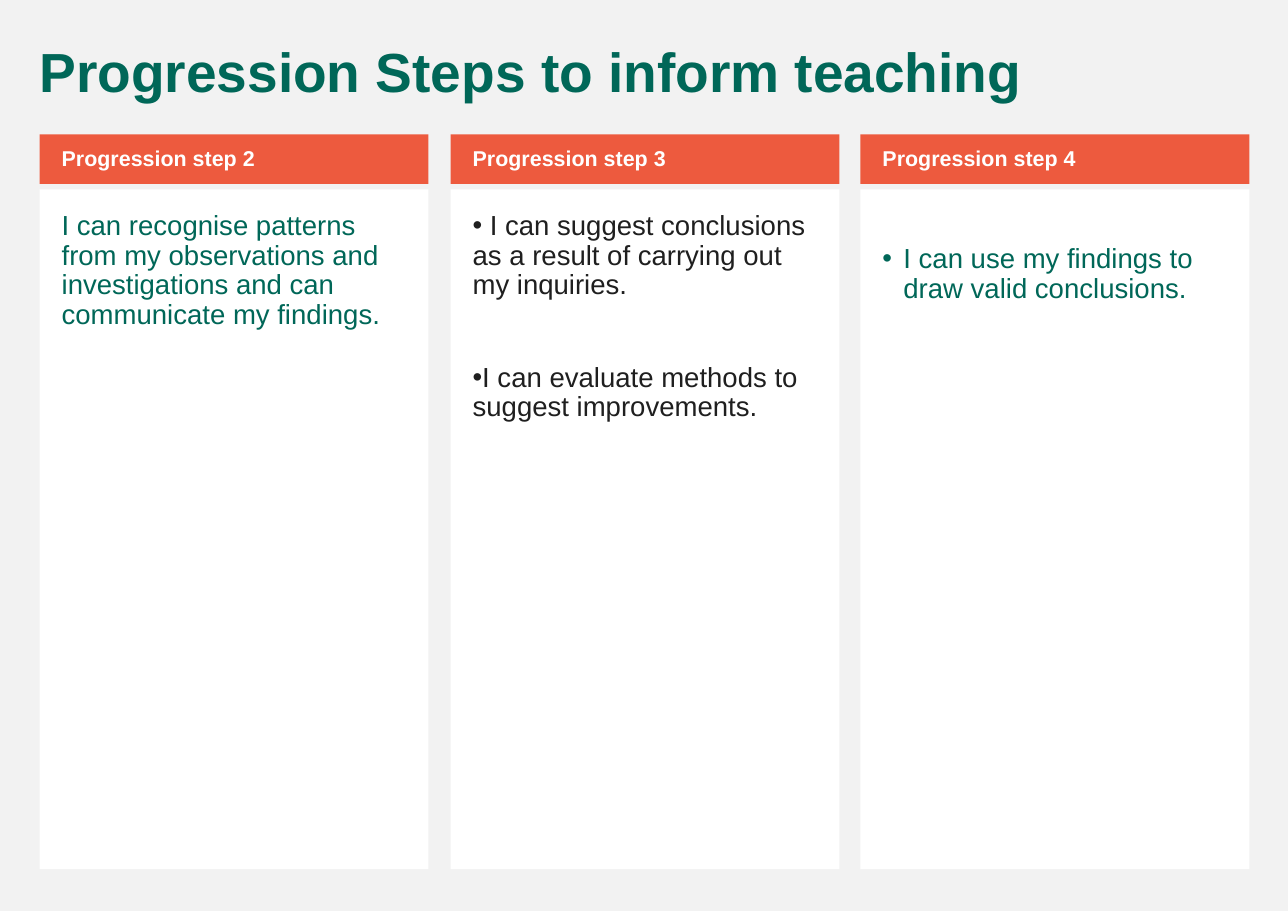
"""Build a slide that sets three progression steps side by side."""
from lxml import etree
from pptx import Presentation
from pptx.dml.color import RGBColor
from pptx.enum.shapes import MSO_SHAPE
from pptx.enum.text import MSO_ANCHOR, PP_ALIGN
from pptx.oxml.ns import qn
from pptx.util import Pt

RECTANGLE = MSO_SHAPE.RECTANGLE
TOP, MIDDLE = MSO_ANCHOR.TOP, MSO_ANCHOR.MIDDLE
LEFT = PP_ALIGN.LEFT
PX = 9144
GREEN, ORANGE, INK, WHITE, GREY = "006758", "ED5A3E", "1F1F1F", "FFFFFF", "F2F2F2"
COLUMN_WIDTH = 353
HANGING = 19


def paint(fill, color):
    fill.solid()
    fill.fore_color.rgb = RGBColor.from_string(color)


def write(box, lines, size, color, bold, insets, anchor, gap=11):
    frame = box.text_frame
    frame.word_wrap = True
    frame.vertical_anchor = anchor
    frame.margin_left, frame.margin_top, frame.margin_right, frame.margin_bottom = [
        inset * PX for inset in insets
    ]
    frame.text = "\n".join(lines)
    for para in frame.paragraphs:
        para.alignment = LEFT
        para.line_spacing = 0.9
        para.space_before = Pt(gap)
        for span in para.runs:
            span.font.name = "Arial"
            span.font.size = Pt(size)
            span.font.bold = bold
            paint(span.font.fill, color)


deck = Presentation()
deck.slide_width, deck.slide_height = 1169 * PX, 827 * PX
page = deck.slides.add_slide(deck.slide_layouts[6])
paint(page.background.fill, GREY)

title = page.shapes.add_textbox(26 * PX, 36 * PX, 1108 * PX, 65 * PX)
write(title, ["Progression Steps to inform teaching"], 36, GREEN, True, (10, 5, 10, 5), TOP)

steps = [
    (36, "Progression step 2", GREEN, 20, None,
     ["I can recognise patterns from my observations and investigations "
      "and can communicate my findings."]),
    (409, "Progression step 3", INK, 20, 0,
     [" I can suggest conclusions as a result of carrying out my inquiries.",
      "I can evaluate methods to suggest improvements."]),
    (781, "Progression step 4", GREEN, 50, HANGING,
     ["I can use my findings to draw valid conclusions."]),
]

for left, heading, color, top_inset, indent, statements in steps:
    panel = page.shapes.add_shape(RECTANGLE, left * PX, 172 * PX, COLUMN_WIDTH * PX, 617 * PX)
    header = page.shapes.add_shape(RECTANGLE, left * PX, 122 * PX, COLUMN_WIDTH * PX, 45 * PX)
    for box, fill_color in ((panel, WHITE), (header, ORANGE)):
        paint(box.fill, fill_color)
        box.line.fill.background()
        box.shadow.inherit = False
    write(header, [heading], 14, WHITE, True, (20, 5, 10, 5), MIDDLE)
    write(panel, statements, 18, color, False, (20, top_inset, 20, 20), TOP, gap=41)
    if indent is not None:
        for para in panel.text_frame.paragraphs:
            properties = para._p.get_or_add_pPr()
            properties.set("marL", str(indent * PX))
            properties.set("indent", str(-indent * PX))
            etree.SubElement(properties, qn("a:buFont")).set("typeface", "Arial")
            etree.SubElement(properties, qn("a:buChar")).set("char", "•")

deck.save("out.pptx")
